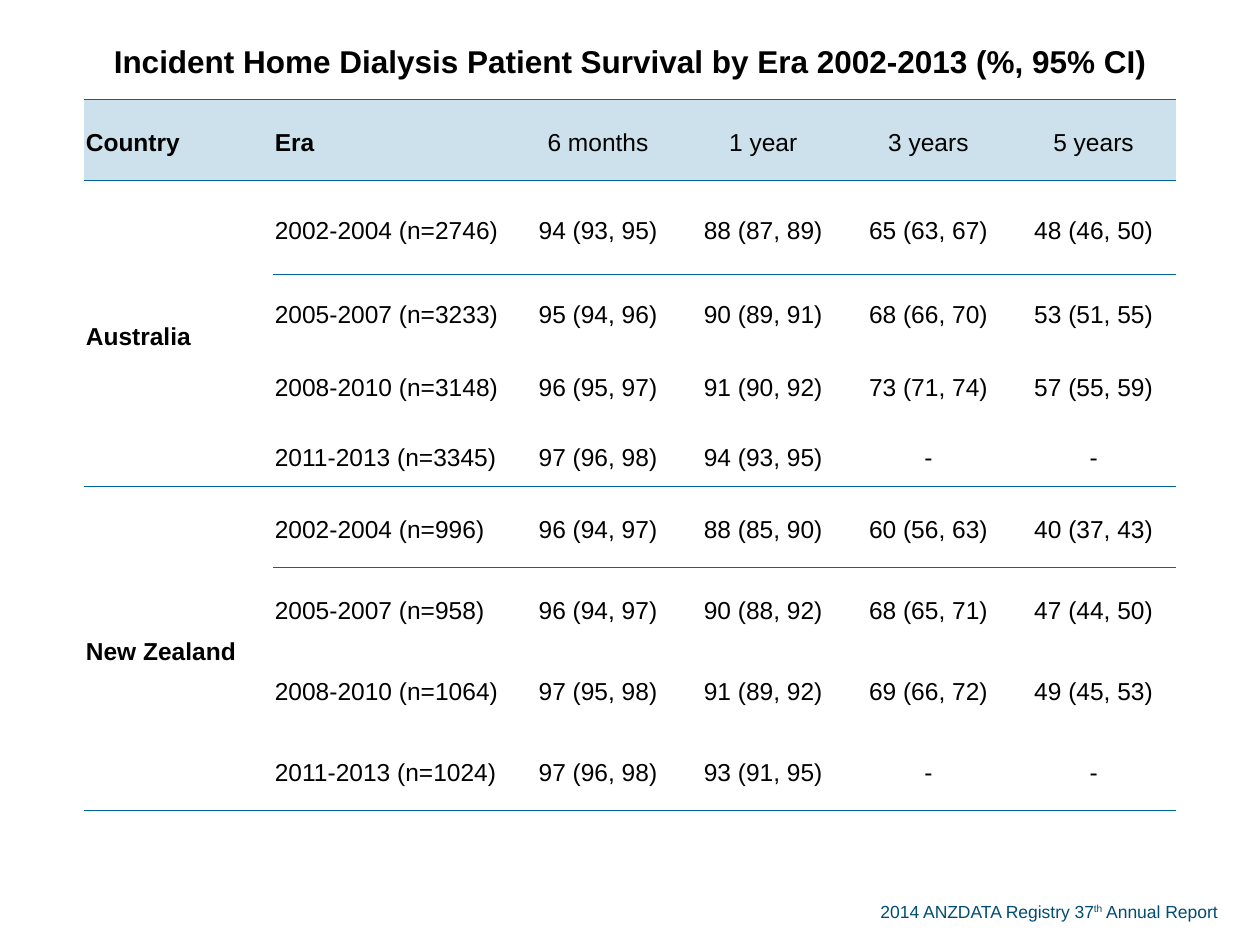
from lxml.etree import SubElement
from pptx import Presentation
from pptx.dml.color import RGBColor
from pptx.enum.text import MSO_ANCHOR, PP_ALIGN
from pptx.oxml import parse_xml
from pptx.oxml.ns import nsdecls, qn
from pptx.util import Cm, Pt


def style_font(font, color, **values):
    font.name = "Arial"
    font.color.rgb = RGBColor.from_string(color)
    for name, value in values.items():
        setattr(font, name, value)


def add_border(cell, side):
    ln = parse_xml(f'<a:{side} {nsdecls("a")} w="6350"/>')
    fill = SubElement(ln, qn("a:solidFill"))
    SubElement(fill, qn("a:srgbClr"), val="006699")
    cell._tc.get_or_add_tcPr().insert(0, ln)


prs = Presentation()
prs.slide_width, prs.slide_height = Cm(25.4), Cm(19.05)
s = prs.slides.add_slide(prs.slide_layouts[6])

rows = [
    ["Incident Home Dialysis Patient Survival by Era 2002-2013 (%, 95% CI)", "", "", "", "", ""],
    ["Country", "Era", "6 months", "1 year", "3 years", "5 years"],
    ["Australia", "2002-2004 (n=2746)", "94 (93, 95)", "88 (87, 89)", "65 (63, 67)", "48 (46, 50)"],
    ["", "2005-2007 (n=3233)", "95 (94, 96)", "90 (89, 91)", "68 (66, 70)", "53 (51, 55)"],
    ["", "2008-2010 (n=3148)", "96 (95, 97)", "91 (90, 92)", "73 (71, 74)", "57 (55, 59)"],
    ["", "2011-2013 (n=3345)", "97 (96, 98)", "94 (93, 95)", "-", "-"],
    ["New Zealand", "2002-2004 (n=996)", "96 (94, 97)", "88 (85, 90)", "60 (56, 63)", "40 (37, 43)"],
    ["", "2005-2007 (n=958)", "96 (94, 97)", "90 (88, 92)", "68 (65, 71)", "47 (44, 50)"],
    ["", "2008-2010 (n=1064)", "97 (95, 98)", "91 (89, 92)", "69 (66, 72)", "49 (45, 53)"],
    ["", "2011-2013 (n=1024)", "97 (96, 98)", "93 (91, 95)", "-", "-"],
]
widths = [3.81, 4.88] + [3.33] * 4
heights = [1.68, 1.63, 1.9, 1.47, 1.5, 1.3] + [1.63] * 4
country_rows = [2, 6]
ruled_below = [0, 1, 5, 9]

table = s.shapes.add_table(
    len(rows), len(widths), Cm(1.7), Cm(0.33), Cm(sum(widths)), Cm(sum(heights))
).table
table.first_row = table.horz_banding = False
table._tbl.tblPr.find(qn("a:tableStyleId")).text = "{2D5ABB26-0587-4C30-8999-92F81FD0307C}"
for column, width in zip(table.columns, widths):
    column.width = Cm(width)
for row, height in zip(table.rows, heights):
    row.height = Cm(height)
table.cell(0, 0).merge(table.cell(0, 5))
for i in country_rows:
    table.cell(i, 0).merge(table.cell(i + 3, 0))

cell_format = {
    "vertical_anchor": MSO_ANCHOR.MIDDLE,
    "margin_left": Cm(0.03),
    "margin_right": Cm(0.03),
    "margin_top": Cm(0.03),
    "margin_bottom": 0,
}
for i, texts in enumerate(rows):
    for j, text in enumerate(texts):
        cell = table.cell(i, j)
        for name, value in cell_format.items():
            setattr(cell, name, value)
        if i == 1:
            cell.fill.solid()
            cell.fill.fore_color.rgb = RGBColor.from_string("CCE1EB")
        else:
            cell.fill.background()
        if i in ruled_below or (j == 0 and i in country_rows):
            add_border(cell, "lnB")
        if i - 1 in ruled_below:
            add_border(cell, "lnT")
        if text:
            p = cell.text_frame.paragraphs[0]
            p.alignment = PP_ALIGN.CENTER if i == 0 or j > 1 else PP_ALIGN.LEFT
            p.line_spacing = 1.19
            p.space_after = Pt(14)
            r = p.add_run()
            r.text = text
            bold = j == 0 or (i, j) == (1, 1)
            style_font(r.font, "000000", size=Pt(18 if i == 0 else 14), bold=bold)

sp = s.shapes.add_textbox(Cm(17.5), Cm(18.03), Cm(7.59), Cm(0.69))
tf = sp.text_frame
tf.word_wrap = True
p = tf.paragraphs[0]
for text, baseline in [("2014 ANZDATA Registry 37", 0), ("th", 30000), (" Annual Report", 0)]:
    r = p.add_run()
    r.text = text
    style_font(r.font, "004D73", size=Pt(10))
    if baseline:
        r.font._element.set("baseline", str(baseline))

prs.save("out.pptx")
